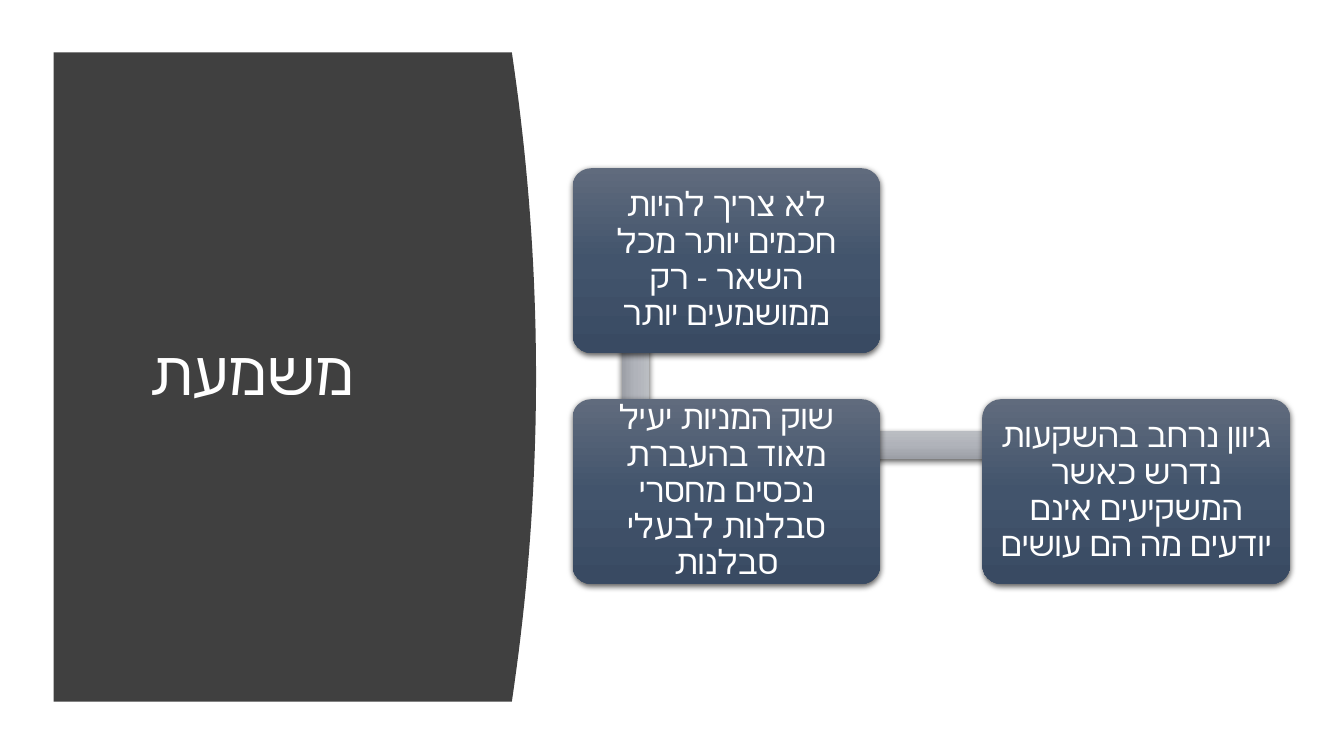
import pptx
import pptx.dml.color
import pptx.enum.shapes
import pptx.enum.text
import pptx.oxml.ns
import pptx.util
from dataclasses import dataclass
from lxml import etree

Cm = pptx.util.Cm
Pt = pptx.util.Pt
RGB = pptx.dml.color.RGBColor.from_string
qn = pptx.oxml.ns.qn
SHAPE = pptx.enum.shapes.MSO_SHAPE
ALIGN = pptx.enum.text.PP_ALIGN
ANCHOR = pptx.enum.text.MSO_ANCHOR


@dataclass(frozen=True)
class Theme:
    panel: str = "404040"
    text: str = "FFFFFF"
    box: tuple = ("606B7D", "42546C", "394A62")
    bar: tuple = ("BABDC2", "B0B3BA", "9C9FA6")
    title_font: str = "Arial"
    body_font: str = "Calibri"
    title_size: int = 44
    body_size: int = 24


THEME = Theme()

# Box grid in cm: left and top of the first box, box size, column and row pitch
LEFT, TOP = 14.43, 4.24
BOX_W, BOX_H = 7.75, 4.65
COL_PITCH, ROW_PITCH = 10.33, 5.82

# Column, row and text of each step
STEPS = [
    (0, 0, "לא צריך להיות חכמים יותר מכל השאר - רק ממושמעים יותר"),
    (0, 1, "שוק המניות יעיל מאוד בהעברת נכסים מחסרי סבלנות לבעלי סבלנות"),
    (1, 1, "גיוון נרחב בהשקעות נדרש כאשר המשקיעים אינם יודעים מה הם עושים"),
]

# Left, top, length and rotation of the bars that link the steps
BARS = [(13.13, 7.95, 5.77, 90), (16.02, 10.87, 10.26, 0)]
BAR_THICKNESS = 0.69


def set_all(obj, values):
    for name, value in values.items():
        setattr(obj, name, value)


def add_gradient_shape(s, kind, box, colors):
    """Add a shape with a three-stop vertical gradient and a soft shadow."""
    sp = s.shapes.add_shape(kind, *(Cm(v) for v in box))
    sp.line.fill.background()
    sp.fill.gradient()
    sp.fill.gradient_angle = 270
    stops = sp._element.spPr.find(".//" + qn("a:gsLst"))
    for old in list(stops):
        stops.remove(old)
    for pos, color in zip((0, 50000, 100000), colors):
        stop = etree.SubElement(stops, qn("a:gs"), pos=str(pos))
        etree.SubElement(stop, qn("a:srgbClr"), val=color)

    sp.shadow.inherit = False
    effects = sp._element.spPr.find(qn("a:effectLst"))
    shadow = etree.SubElement(effects, qn("a:outerShdw"), blurRad=str(Pt(4.5)),
                              dist=str(Pt(1.5)), dir="5400000", rotWithShape="0")
    black = etree.SubElement(shadow, qn("a:srgbClr"), val="000000")
    etree.SubElement(black, qn("a:alpha"), val="63000")
    return sp


def write_rtl(tf, text, font, size, insets):
    """Write one centred right-to-left paragraph."""
    set_all(tf, {"word_wrap": True, "vertical_anchor": ANCHOR.MIDDLE, **insets})
    p = tf.paragraphs[0]
    set_all(p, {"alignment": ALIGN.CENTER, "line_spacing": 0.9})
    p._p.get_or_add_pPr().set("rtl", "1")
    r = p.add_run()
    r.text = text
    set_all(r.font, {"name": font, "size": Pt(size)})
    r.font.color.rgb = RGB(THEME.text)


def add_panel(s):
    """Add the dark panel whose right edge bulges as a parabola."""
    left, top, right, height, bulge, steps = 1.35, 1.32, 12.9, 16.36, 0.61, 40
    edge = []
    for i in range(steps + 1):
        t = i / steps
        edge.append((Cm(right + bulge * 4 * t * (1 - t)), Cm(top + height * t)))
    builder = s.shapes.build_freeform(Cm(left), Cm(top))
    builder.add_line_segments(edge + [(Cm(left), Cm(top + height))], close=True)
    sp = builder.convert_to_shape()
    sp.fill.solid()
    sp.fill.fore_color.rgb = RGB(THEME.panel)
    sp.line.fill.background()
    sp.shadow.inherit = False


def add_title(s, text):
    sp = s.shapes.add_textbox(Cm(2.39), Cm(2.82), Cm(9.5), Cm(13.31))
    insets = {"margin_left": Cm(0.25), "margin_right": Cm(1.83)}
    write_rtl(sp.text_frame, text, THEME.title_font, THEME.title_size, insets)


def add_bar(s, left, top, length, rotation):
    sp = add_gradient_shape(s, SHAPE.RECTANGLE,
                            (left, top, length, BAR_THICKNESS), THEME.bar)
    sp.rotation = rotation


def add_step(s, col, row, text):
    box = (LEFT + col * COL_PITCH, TOP + row * ROW_PITCH, BOX_W, BOX_H)
    sp = add_gradient_shape(s, SHAPE.ROUNDED_RECTANGLE, box, THEME.box)
    sp.adjustments[0] = 0.1
    insets = {f"margin_{side}": Cm(0.15)
              for side in ("left", "top", "right", "bottom")}
    write_rtl(sp.text_frame, text, THEME.body_font, THEME.body_size, insets)


def main():
    prs = pptx.Presentation()
    set_all(prs, {"slide_width": Cm(33.87), "slide_height": Cm(19.05)})
    s = prs.slides.add_slide(prs.slide_layouts[6])

    # Title panel
    add_panel(s)
    add_title(s, "משמעת")

    # Linked steps, with the bars behind the boxes
    for bar in BARS:
        add_bar(s, *bar)
    for step in STEPS:
        add_step(s, *step)

    prs.save("out.pptx")


if __name__ == "__main__":
    main()
